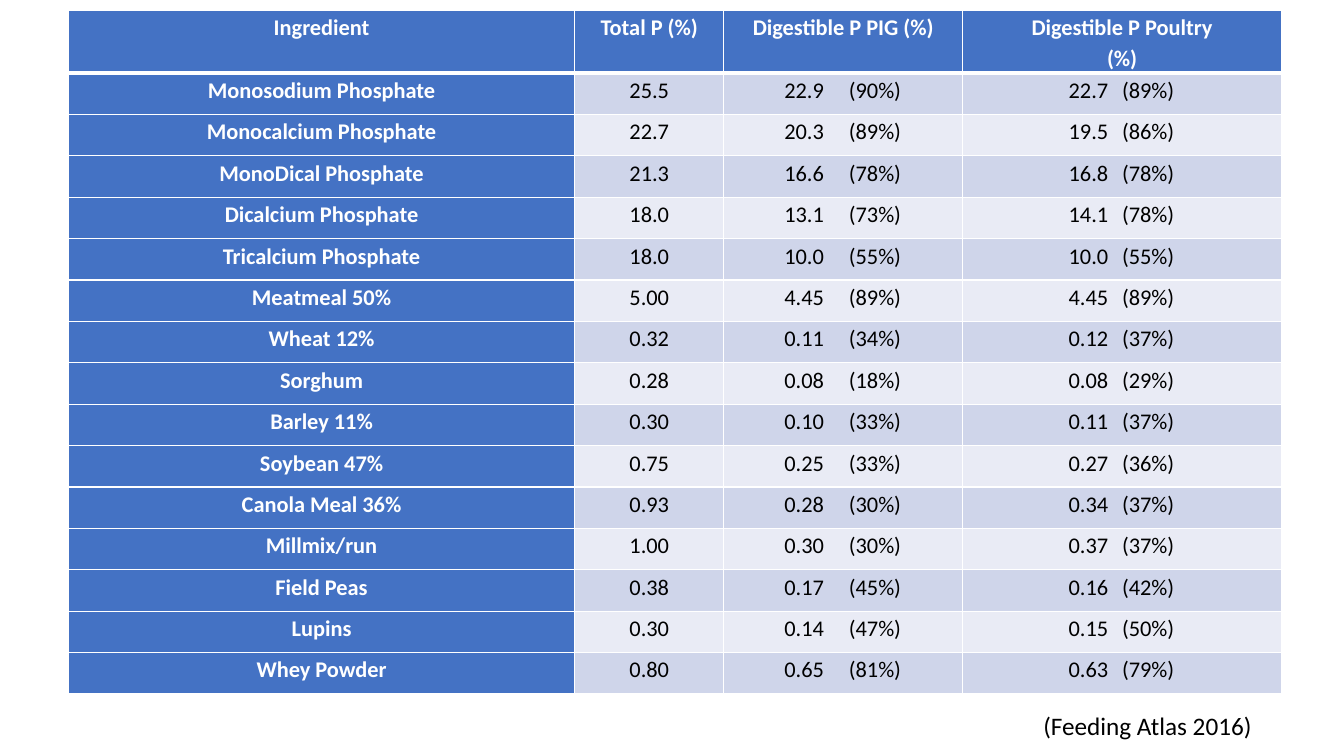
from dataclasses import dataclass

from lxml import etree
from pptx import Presentation
from pptx.dml.color import RGBColor
from pptx.enum.text import PP_ALIGN
from pptx.oxml.ns import qn
from pptx.util import Emu, Inches, Pt

LEFT, CENTER = PP_ALIGN.LEFT, PP_ALIGN.CENTER

HEADERS = ["Ingredient", "Total P (%)", "Digestible P PIG (%)", "Digestible P Poultry\n(%)"]

# ingredient, total P, (pig digestible P, share), (poultry digestible P, share)
INGREDIENTS = [
    ("Monosodium Phosphate", "25.5", ("22.9", "90%"), ("22.7", "89%")),
    ("Monocalcium Phosphate", "22.7", ("20.3", "89%"), ("19.5", "86%")),
    ("MonoDical Phosphate", "21.3", ("16.6", "78%"), ("16.8", "78%")),
    ("Dicalcium Phosphate", "18.0", ("13.1", "73%"), ("14.1", "78%")),
    ("Tricalcium Phosphate", "18.0", ("10.0", "55%"), ("10.0", "55%")),
    ("Meatmeal 50%", "5.00", ("4.45", "89%"), ("4.45", "89%")),
    ("Wheat 12%", "0.32", ("0.11", "34%"), ("0.12", "37%")),
    ("Sorghum", "0.28", ("0.08", "18%"), ("0.08", "29%")),
    ("Barley 11%", "0.30", ("0.10", "33%"), ("0.11", "37%")),
    ("Soybean 47%", "0.75", ("0.25", "33%"), ("0.27", "36%")),
    ("Canola Meal 36%", "0.93", ("0.28", "30%"), ("0.34", "37%")),
    ("Millmix/run", "1.00", ("0.30", "30%"), ("0.37", "37%")),
    ("Field Peas", "0.38", ("0.17", "45%"), ("0.16", "42%")),
    ("Lupins", "0.30", ("0.14", "47%"), ("0.15", "50%")),
    ("Whey Powder", "0.80", ("0.65", "81%"), ("0.63", "79%")),
]
SOURCE = "(Feeding Atlas 2016)"

SLIDE_W, SLIDE_H = 13.33, 7.5
TABLE_X, TABLE_Y, TABLE_H = 0.68, 0.1, 6.78
COL_WIDTHS = [5.02, 1.48, 2.37, 3.16]
HEADER_H = 0.62
ROW_H = (TABLE_H - HEADER_H) / len(INGREDIENTS)
INSET = 0.05
# column: (left margin of the value, tab from the value to its share)
PAIR_STOPS = {2: (0.6, 0.64), 3: (1.05, 0.53)}


@dataclass(frozen=True)
class Theme:
    font: str = "Calibri"
    table_size: int = 16
    source_size: int = 18
    line_spacing: float = 1.15
    accent: str = "4472C4"
    bands: tuple = ("CFD5EA", "E9EBF5")
    light: str = "FFFFFF"
    dark: str = "000000"
    rule: int = 1
    header_rule: int = 3


THEME = Theme()


def style_runs(p, size, color, bold=False):
    for r in p.runs:
        r.font.name = THEME.font
        r.font.size = Pt(size)
        r.font.bold = bold
        r.font.color.rgb = RGBColor.from_string(color)


def add_borders(cell, top, bottom):
    """Draw the four cell edges; call before the fill, which must follow them in the XML."""
    tc_pr = cell._tc.get_or_add_tcPr()
    for side, width in (("L", THEME.rule), ("R", THEME.rule), ("T", top), ("B", bottom)):
        ln = etree.SubElement(tc_pr, qn(f"a:ln{side}"), w=str(Pt(width)))
        fill = etree.SubElement(ln, qn("a:solidFill"))
        etree.SubElement(fill, qn("a:srgbClr"), val=THEME.light)


def add_tab_stop(p, pos):
    tabs = etree.SubElement(p._p.get_or_add_pPr(), qn("a:tabLst"))
    etree.SubElement(tabs, qn("a:tab"), pos=str(Inches(pos)), algn="l")


def fill_cell(cell, row, col, content):
    is_pair = isinstance(content, tuple)
    is_head = row == 0 or col == 0
    margin, tab = PAIR_STOPS[col] if is_pair else (INSET, None)
    cell.margin_left, cell.margin_right = Inches(margin), Inches(INSET)
    cell.margin_top = cell.margin_bottom = Emu(0)
    add_borders(cell,
                top=THEME.header_rule if row == 1 else THEME.rule,
                bottom=THEME.header_rule if row == 0 else THEME.rule)
    cell.fill.solid()
    cell.fill.fore_color.rgb = RGBColor.from_string(
        THEME.accent if is_head else THEME.bands[(row - 1) % 2])

    tf = cell.text_frame
    tf.text = f"{content[0]}\t({content[1]})" if is_pair else content
    for p in tf.paragraphs:
        p.alignment = LEFT if is_pair else CENTER
        p.line_spacing = THEME.line_spacing
        if is_pair:
            add_tab_stop(p, tab)
        style_runs(p, THEME.table_size, THEME.light if is_head else THEME.dark, is_head)


def add_phosphorus_table(s):
    rows = [HEADERS, *INGREDIENTS]
    table = s.shapes.add_table(
        len(rows), len(COL_WIDTHS), Inches(TABLE_X), Inches(TABLE_Y),
        Inches(sum(COL_WIDTHS)), Inches(TABLE_H)).table
    table.first_col = True
    for column, width in zip(table.columns, COL_WIDTHS):
        column.width = Inches(width)
    for i, row in enumerate(rows):
        table.rows[i].height = Inches(ROW_H if i else HEADER_H)
        for j, content in enumerate(row):
            fill_cell(table.cell(i, j), i, j, content)


def add_source(s):
    tf = s.shapes.add_textbox(Inches(10.25), Inches(7), Inches(2.3), Inches(0.4)).text_frame
    tf.word_wrap = False
    tf.text = SOURCE
    style_runs(tf.paragraphs[0], THEME.source_size, THEME.dark)


def main():
    prs = Presentation()
    prs.slide_width, prs.slide_height = Inches(SLIDE_W), Inches(SLIDE_H)
    s = prs.slides.add_slide(prs.slide_layouts[6])
    add_phosphorus_table(s)
    add_source(s)
    prs.save("out.pptx")


if __name__ == "__main__":
    main()
